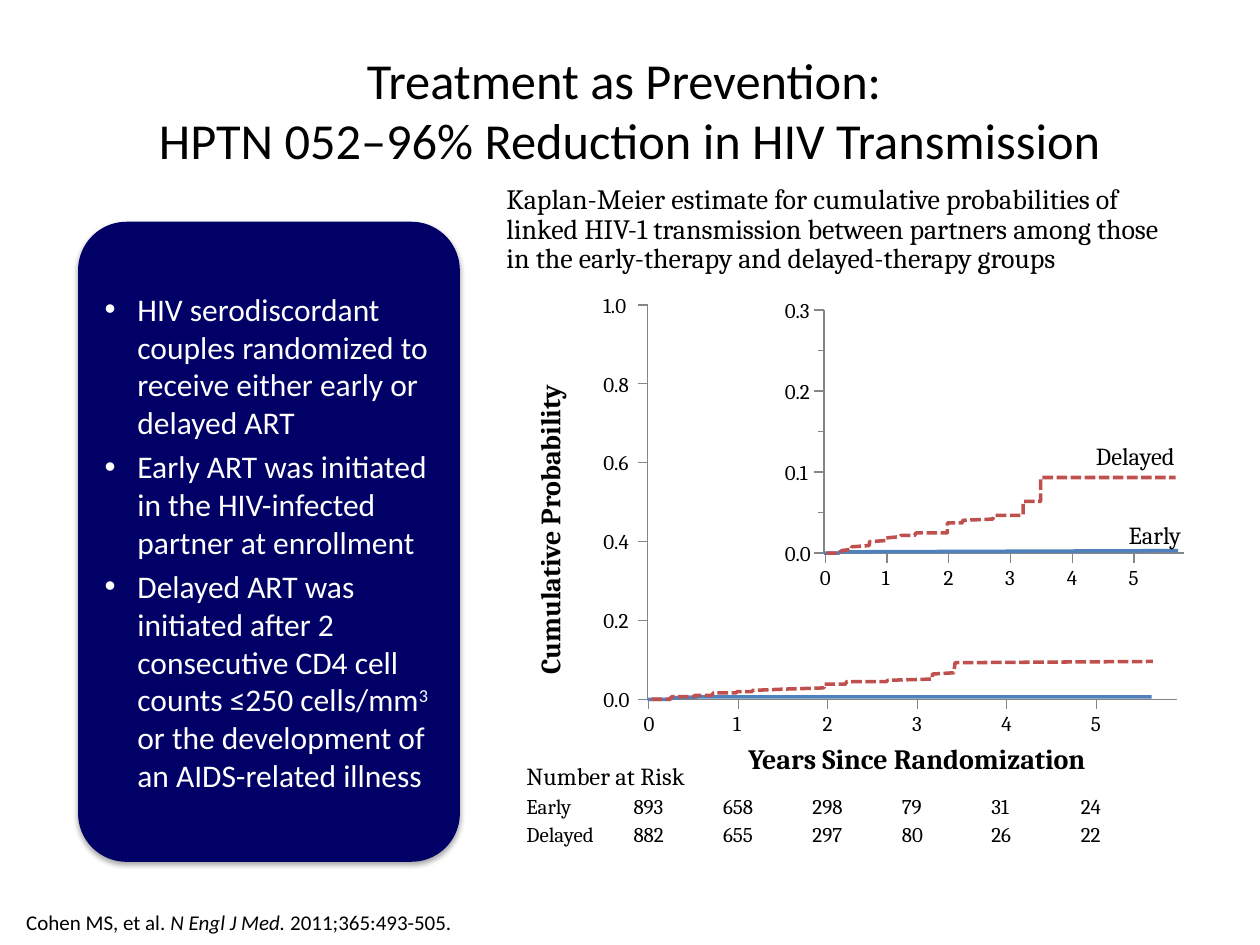
from lxml import etree
from pptx import Presentation
from pptx.dml.color import RGBColor
from pptx.enum.dml import MSO_LINE
from pptx.enum.shapes import MSO_CONNECTOR, MSO_SHAPE
from pptx.enum.text import MSO_ANCHOR, MSO_AUTO_SIZE, PP_ALIGN
from pptx.oxml.ns import qn
from pptx.util import Inches, Pt

BLACK = RGBColor(0x00, 0x00, 0x00)
WHITE = RGBColor(0xFF, 0xFF, 0xFF)
NAVY = RGBColor(0x00, 0x00, 0x66)
GRAY = RGBColor(0x86, 0x86, 0x86)
BLUE = RGBColor(0x4F, 0x81, 0xBD)
RED = RGBColor(0xC0, 0x50, 0x4D)
STRAIGHT = MSO_CONNECTOR.STRAIGHT
ROUNDED = MSO_SHAPE.ROUNDED_RECTANGLE
MIDDLE = MSO_ANCHOR.MIDDLE
GROW = MSO_AUTO_SIZE.SHAPE_TO_FIT_TEXT
CENTER = PP_ALIGN.CENTER
DASH = MSO_LINE.SQUARE_DOT

POINTS = [
    "HIV serodiscordant couples randomized to receive either early or delayed ART",
    "Early ART was initiated in the HIV-infected partner at enrollment",
    "Delayed ART was initiated after 2 consecutive CD4 cell counts ≤250 cells/mm",
]
RISK = {"Early": (893, 658, 298, 79, 31, 24),
        "Delayed": (882, 655, 297, 80, 26, 22)}

# Curve points: inches right of and above the origin of the plot
MAIN_EARLY = [(0, 0), (0.17, 0), (0.18, 0.01), (0.44, 0.02), (4, 0.02)]
MAIN_DELAYED = [
    (0.03, 0), (0.18, 0), (0.19, 0.02), (0.37, 0.02), (0.37, 0.03),
    (0.51, 0.03), (0.52, 0.05), (0.7, 0.05), (0.71, 0.06), (0.83, 0.06),
    (0.83, 0.07), (1.08, 0.08), (1.4, 0.09), (1.4, 0.12), (1.57, 0.12),
    (1.58, 0.14), (1.9, 0.14), (1.9, 0.15), (2.26, 0.16), (2.26, 0.2),
    (2.43, 0.21), (2.44, 0.29), (4.01, 0.3)]
ZOOM_EARLY = [(0, 0), (0.12, 0), (0.12, 0.01), (2.81, 0.02)]
ZOOM_DELAYED = [
    (0.02, 0), (0.13, 0), (0.14, 0.02), (0.22, 0.03), (0.22, 0.05),
    (0.36, 0.06), (0.36, 0.09), (0.49, 0.1), (0.49, 0.12), (0.6, 0.13),
    (0.61, 0.14), (0.72, 0.14), (0.73, 0.16), (0.98, 0.16), (0.98, 0.24),
    (1.1, 0.24), (1.1, 0.26), (1.34, 0.27), (1.35, 0.3), (1.58, 0.3),
    (1.58, 0.41), (1.72, 0.41), (1.72, 0.6), (2.79, 0.6)]


def style(para, size, face, color=BLACK, bold=False):
    for run in para.runs:
        font = run.font
        font.size, font.name, font.bold = Pt(size), face, bold
        font.color.rgb = color


def add_text(slide, words, box, size=12, face="Cambria", bold=False, wrap=False):
    shape = slide.shapes.add_textbox(*map(Inches, box))
    frame = shape.text_frame
    frame.text = words
    frame.word_wrap = wrap
    frame.auto_size = GROW
    style(frame.paragraphs[0], size, face, bold=bold)
    return shape


def add_line(slide, x1, y1, x2, y2):
    line = slide.shapes.add_connector(STRAIGHT, *map(Inches, (x1, y1, x2, y2)))
    line.line.color.rgb = GRAY
    line.line.width = Pt(0.75)
    etree.SubElement(line._element.spPr, qn("a:effectLst"))


def add_curve(slide, left, base, points, color, dash=None):
    spots = [(Inches(left + x), Inches(base - y)) for x, y in points]
    pen = slide.shapes.build_freeform(*spots[0])
    pen.add_line_segments(spots[1:], close=False)
    curve = pen.convert_to_shape()
    curve.shadow.inherit = False
    curve.fill.background()
    curve.line.color.rgb = color
    curve.line.width = Pt(2)
    if dash:
        curve.line.dash_style = dash


def add_plot(slide, box, step, marks, gap, early, delayed, minor=False):
    """Draw axes and both curves; step is one year, gap places the y labels."""
    left, top, width, height = box
    base = top + height
    add_line(slide, left, base, left + width, base)
    add_line(slide, left, top, left, base)
    for year in range(6):
        x = left + 0.01 + year * step
        add_line(slide, x, base, x, base + 0.08)
        add_text(slide, str(year), (x - 0.14, base + 0.04, 0.3, 0.3))
    rise = height / (len(marks) - 1)
    for i, mark in enumerate(marks):
        y = base - i * rise
        add_line(slide, left, y, left - 0.08, y)
        add_text(slide, mark, (left - gap, y - 0.15, 0.45, 0.3))
        if minor and i:
            half = y + rise / 2
            add_line(slide, left, half, left - 0.05, half)
    add_curve(slide, left, base, early, BLUE)
    add_curve(slide, left, base, delayed, RED, DASH)


def add_bullet(para):
    props = para._p.get_or_add_pPr()
    props.set("marL", str(Inches(0.26)))
    props.set("indent", str(-Inches(0.26)))
    tint = etree.SubElement(props, qn("a:buClr"))
    etree.SubElement(tint, qn("a:srgbClr"), val=str(WHITE))
    etree.SubElement(props, qn("a:buFont"), typeface="Arial")
    etree.SubElement(props, qn("a:buChar"), char="•")


def add_shadow(shape):
    shape.shadow.inherit = False
    effects = shape._element.spPr.find(qn("a:effectLst"))
    outer = etree.SubElement(effects, qn("a:outerShdw"), blurRad=str(Pt(3.1)),
                             dist=str(Pt(1.8)), dir="5400000", rotWithShape="0")
    tint = etree.SubElement(outer, qn("a:srgbClr"), val=str(BLACK))
    etree.SubElement(tint, qn("a:alpha"), val="35000")


def add_panel(slide, box):
    panel = slide.shapes.add_shape(ROUNDED, *map(Inches, box))
    panel.adjustments[0] = 0.127 * 1.0
    panel.fill.solid()
    panel.fill.fore_color.rgb = NAVY
    panel.line.fill.background()
    add_shadow(panel)
    frame = panel.text_frame
    frame.text = "\n".join(POINTS)
    frame.word_wrap = True
    frame.vertical_anchor = MIDDLE
    frame.margin_left = frame.margin_right = Inches(0.1)
    frame.margin_top = frame.margin_bottom = Inches(0.1)
    last = frame.paragraphs[-1]
    power = last.add_run()
    power.text = "3"
    last.add_run().text = " or the development of an AIDS-related illness"
    for i, para in enumerate(frame.paragraphs):
        add_bullet(para)
        para.alignment = PP_ALIGN.LEFT
        if i:
            para.space_before = Pt(3.6)
        style(para, 18, "Calibri", WHITE)
    power._r.get_or_add_rPr().set("baseline", "30000")


def add_risk(slide, left, top):
    add_text(slide, "Number at Risk", (left, top, 1.57, 0.34), 14)
    for i, (group, counts) in enumerate(RISK.items()):
        y = top + 0.26 + i * 0.22
        add_text(slide, group, (left, y, 0.6 + i * 0.2, 0.3))
        for j, count in enumerate(counts):
            word = str(count)
            x = left + 0.85 + j * 0.71
            add_text(slide, word, (x, y, 0.2 + 0.1 * len(word), 0.3))


def add_title(slide, box):
    title = add_text(slide, "Treatment as Prevention: \vHPTN 052–96% Reduction in HIV Transmission",
                     box, 28.8, "Calibri", wrap=True)
    frame = title.text_frame
    frame.auto_size = MSO_AUTO_SIZE.NONE
    frame.vertical_anchor = MIDDLE
    frame.paragraphs[0].alignment = CENTER


def add_source(slide, box):
    note = add_text(slide, "Cohen MS, et al. ", box, 12, "Calibri")
    note.text_frame.vertical_anchor = MIDDLE
    para = note.text_frame.paragraphs[0]
    for words in ("N Engl J Med.", " 2011;365:493-505."):
        para.add_run().text = words
    style(para, 12, "Calibri")
    para.runs[1].font.italic = True


def main():
    deck = Presentation()
    deck.slide_width, deck.slide_height = Inches(10), Inches(7.5)
    slide = deck.slides.add_slide(deck.slide_layouts[6])
    add_title(slide, (0.5, 0.39, 9, 0.96))
    add_source(slide, (0.11, 7.17, 3.62, 0.3))
    head = add_text(slide, "Kaplan-Meier estimate for cumulative probabilities of linked HIV-1 "
                    "transmission between partners among those in the early-therapy and "
                    "delayed-therapy groups", (3.92, 1.42, 5.58, 0.82), 16, wrap=True)
    head.text_frame.paragraphs[0].line_spacing = Pt(17)
    add_panel(slide, (0.62, 1.76, 3.03, 5.08))
    add_risk(slide, 4.08, 5.99)
    side = add_text(slide, "Cumulative Probability", (2.92, 3.83, 2.88, 0.37), 16, bold=True)
    side.rotation = 270
    add_text(slide, "Years Since Randomization", (5.84, 5.84, 3.38, 0.37), 16, bold=True)
    add_plot(slide, (5.14, 2.42, 4.2, 3.13), 0.71,
             ("0.0", "0.2", "0.4", "0.6", "0.8", "1.0"), 0.45, MAIN_EARLY, MAIN_DELAYED)
    add_plot(slide, (6.54, 2.46, 2.86, 1.93), 0.49,
             ("0.0", "0.1", "0.2", "0.3"), 0.41, ZOOM_EARLY, ZOOM_DELAYED, minor=True)
    add_text(slide, "Delayed", (8.6, 3.45, 0.9, 0.34), 14)
    add_text(slide, "Early", (8.86, 4.08, 0.66, 0.34), 14)
    deck.save("out.pptx")


if __name__ == "__main__":
    main()
